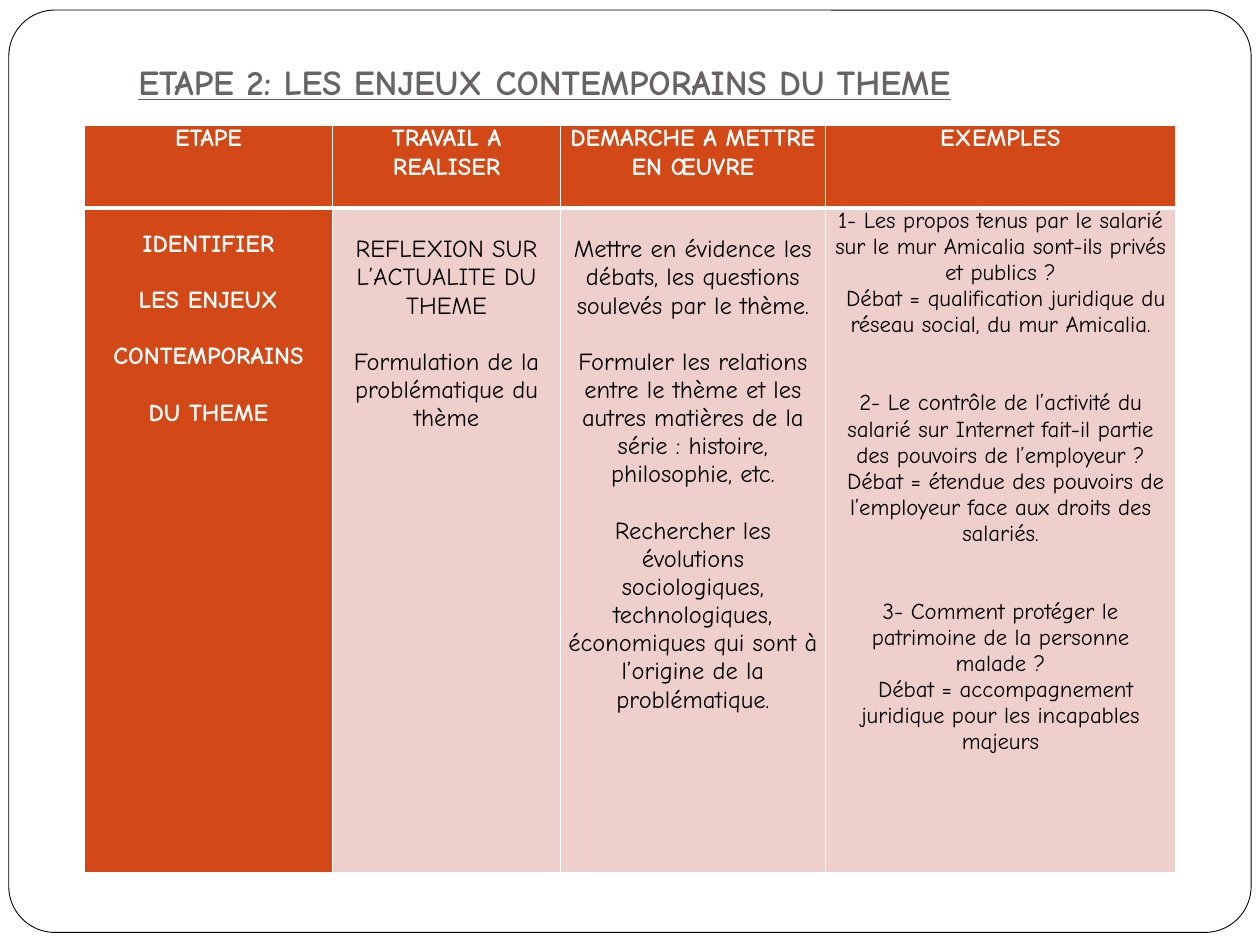
from dataclasses import dataclass

from lxml import etree
from pptx import Presentation
from pptx.dml.color import RGBColor
from pptx.enum.shapes import MSO_SHAPE
from pptx.enum.text import MSO_ANCHOR, PP_ALIGN
from pptx.oxml.ns import qn
from pptx.util import Inches, Pt

ROUNDED = MSO_SHAPE.ROUNDED_RECTANGLE
BOTTOM = MSO_ANCHOR.BOTTOM
CENTER = PP_ALIGN.CENTER


@dataclass(frozen=True)
class Theme:
    font: str = "Comic Neue"
    white: str = "FFFFFF"
    black: str = "000000"
    title: str = "696464"
    accent: str = "D34817"
    tint: str = "EFCFCC"
    title_size: int = 20
    text_size: int = 14
    example_size: int = 13
    thin: int = 1
    thick: int = 3


@dataclass(frozen=True)
class Line:
    text: str
    gap: int = 0         # points above the paragraph
    indent: float = 0    # first line, inches


@dataclass(frozen=True)
class Cell:
    lines: list
    size: int
    color: str
    fill: str
    bold: bool = False
    top: float = 0       # inches above the text


class SlideBuilder:
    def __init__(self, slide, theme):
        self.slide = slide
        self.theme = theme

    def style(self, para, size, color, bold):
        for span in para.runs:
            span.font.name = self.theme.font
            span.font.size = Pt(size)
            span.font.bold = bold
            span.font.color.rgb = RGBColor.from_string(color)

    def frame(self, left, top, width, height):
        shape = self.slide.shapes.add_shape(
            ROUNDED, Inches(left), Inches(top), Inches(width), Inches(height))
        shape.adjustments[0] = 0.05
        shape.shadow.inherit = False
        shape.fill.solid()
        shape.fill.fore_color.rgb = RGBColor.from_string(self.theme.white)
        shape.line.color.rgb = RGBColor.from_string(self.theme.black)
        shape.line.width = Pt(0.5)

    def title(self, text, left, top, width, height):
        box = self.slide.shapes.add_textbox(
            Inches(left), Inches(top), Inches(width), Inches(height))
        text_frame = box.text_frame
        text_frame.word_wrap = True
        text_frame.vertical_anchor = BOTTOM
        text_frame.margin_bottom = Inches(0.1)
        text_frame.text = text
        para = text_frame.paragraphs[0]
        self.style(para, self.theme.title_size, self.theme.title, True)
        para.runs[0].font.underline = True

    def borders(self, cell, top, bottom):
        properties = cell._tc.get_or_add_tcPr()
        widths = {"lnL": self.theme.thin, "lnR": self.theme.thin,
                  "lnT": top, "lnB": bottom}
        for position, (tag, width) in enumerate(widths.items()):
            line = etree.Element(qn(f"a:{tag}"), w=str(Pt(width)))
            fill = etree.SubElement(line, qn("a:solidFill"))
            etree.SubElement(fill, qn("a:srgbClr"), val=self.theme.white)
            properties.insert(position, line)

    def fill_cell(self, cell, content):
        cell.fill.solid()
        cell.fill.fore_color.rgb = RGBColor.from_string(content.fill)
        cell.margin_left = cell.margin_right = Inches(0.06)
        cell.margin_top, cell.margin_bottom = Inches(content.top), 0
        text_frame = cell.text_frame
        text_frame.text = "\n".join(line.text for line in content.lines)
        for para, line in zip(text_frame.paragraphs, content.lines):
            para.alignment = CENTER
            para.space_before = Pt(line.gap)
            if line.indent:
                para._p.get_or_add_pPr().set("indent", str(Inches(line.indent)))
            self.style(para, content.size, content.color, content.bold)

    def table(self, rows, left, top, widths, heights):
        table = self.slide.shapes.add_table(
            len(heights), len(widths), Inches(left), Inches(top),
            Inches(sum(widths)), Inches(sum(heights))).table
        for column, width in zip(table.columns, widths):
            column.width = Inches(width)
        for row, height in zip(table.rows, heights):
            row.height = Inches(height)
        thin, thick = self.theme.thin, self.theme.thick
        for row_index, contents in enumerate(rows):
            edges = (thin, thick) if row_index == 0 else (thick, thin)
            for column_index, content in enumerate(contents):
                cell = table.cell(row_index, column_index)
                self.fill_cell(cell, content)
                self.borders(cell, *edges)


def spaced(texts, gap):
    return [Line(text, gap if index else 0) for index, text in enumerate(texts)]


def examples(pairs, gap, indent):
    lines = []
    for question, debate in pairs:
        lines.append(Line(question, gap if lines else 0))
        lines.append(Line(debate, indent=indent))
    return lines


def main():
    theme = Theme()
    deck = Presentation()
    deck.slide_width, deck.slide_height = Inches(10), Inches(7.5)
    page = SlideBuilder(deck.slides.add_slide(deck.slide_layouts[6]), theme)

    # Frame and title
    page.frame(0.07, 0.08, 9.86, 7.32)
    page.title("ETAPE 2: LES ENJEUX CONTEMPORAINS DU THEME", 1, 0.3, 8.5, 0.61)

    # Table contents
    headings = ["ETAPE", "TRAVAIL A REALISER", "DEMARCHE A METTRE EN ŒUVRE",
                "EXEMPLES"]
    step = ["IDENTIFIER", "LES ENJEUX", "CONTEMPORAINS", "DU THEME"]
    work = ["REFLEXION SUR L’ACTUALITE DU THEME",
            "Formulation de la problématique du thème"]
    method = [
        "Mettre en évidence les débats, les questions soulevés par le thème.",
        "Formuler les relations entre le thème et les autres matières de la "
        "série : histoire, philosophie, etc.",
        "Rechercher les évolutions sociologiques, technologiques, économiques "
        "qui sont à l’origine de la problématique."]
    debates = [
        ("1- Les propos tenus par le salarié sur le mur Amicalia sont-ils "
         "privés et publics ?",
         "Débat = qualification juridique du réseau social, du mur Amicalia."),
        ("2- Le contrôle de l’activité du salarié sur Internet fait-il partie "
         "des pouvoirs de l’employeur ?",
         "Débat = étendue des pouvoirs de l’employeur face aux droits des "
         "salariés."),
        ("3- Comment protéger le patrimoine de la personne malade ?",
         "Débat = accompagnement juridique pour les incapables majeurs")]

    # Table
    size, gap = theme.text_size, 16
    header = [Cell([Line(text)], size, theme.white, theme.accent, bold=True)
              for text in headings]
    body = [
        Cell(spaced(step, gap), size, theme.white, theme.accent, True, 0.18),
        Cell(spaced(work, gap), size, theme.black, theme.tint, top=0.22),
        Cell(spaced(method, gap), size, theme.black, theme.tint, top=0.22),
        Cell(examples(debates, gap=30, indent=0.08), theme.example_size,
             theme.black, theme.tint)]
    page.table([header, body], 0.67, 0.99, [1.97, 1.81, 2.1, 2.78], [0.66, 5.28])

    deck.save("out.pptx")


if __name__ == "__main__":
    main()
